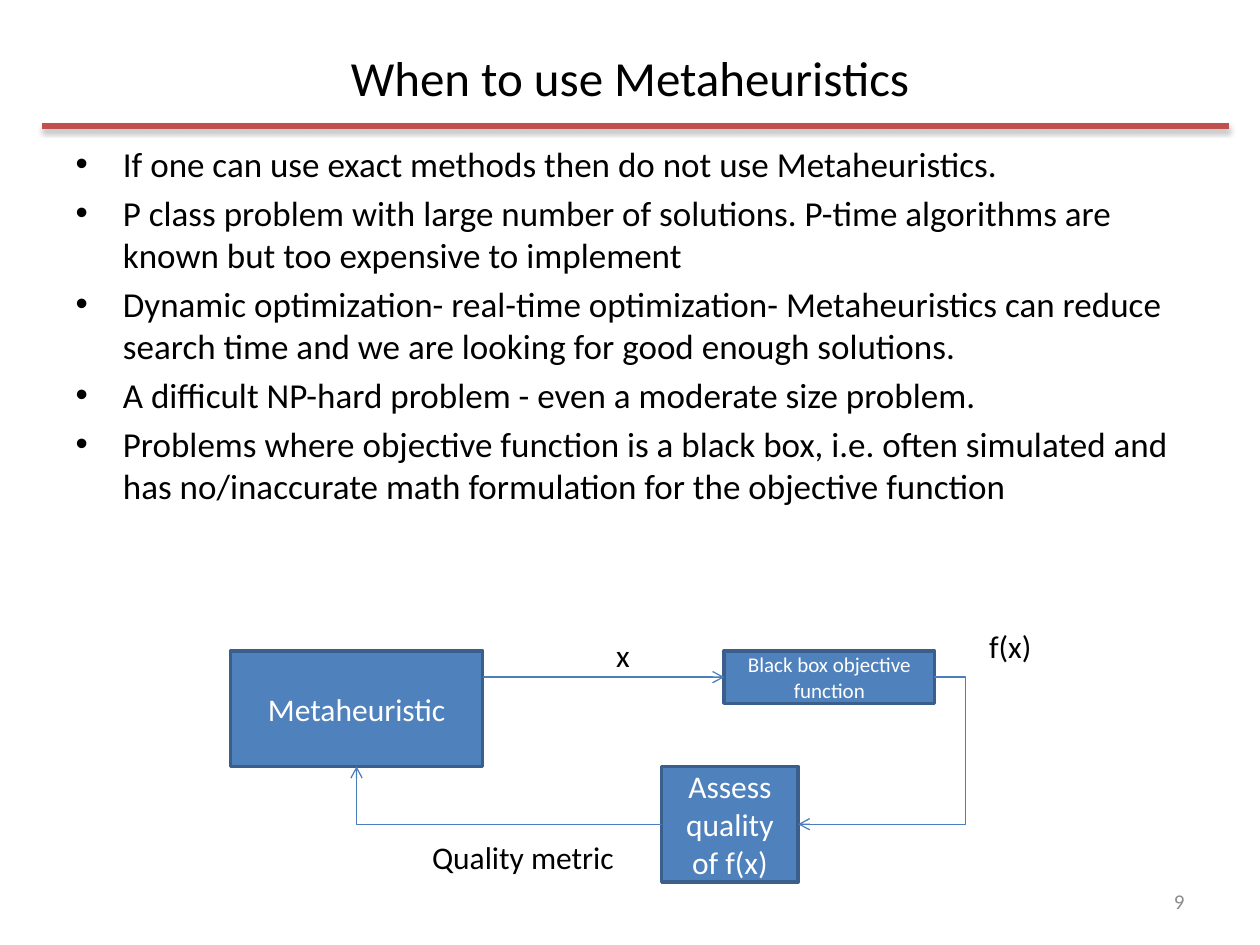
"""Build the slide on when to use metaheuristics, with its feedback loop diagram."""
from lxml.etree import SubElement
from pptx import Presentation
from pptx.dml.color import RGBColor
from pptx.enum.shapes import MSO_CONNECTOR, MSO_SHAPE
from pptx.enum.text import MSO_ANCHOR, MSO_AUTO_SIZE, PP_ALIGN
from pptx.oxml.ns import qn
from pptx.util import Cm, Pt

TITLE = "When to use Metaheuristics"
REASONS = [
    "If one can use exact methods then do not use Metaheuristics.",
    "P class problem with large number of solutions. P-time algorithms are known but too expensive to implement",
    "Dynamic optimization- real-time optimization- Metaheuristics can reduce search time and we are looking for good enough solutions.",
    "A difficult NP-hard problem - even a moderate size problem.",
    "Problems where objective function is a black box, i.e. often simulated and has no/inaccurate math formulation for the objective function",
]
STEPS = {
    "search": ("Metaheuristic", (4.65, 13.12, 5.08, 2.33), "label"),
    "objective": ("Black box objective function", (14.6, 13.12, 4.24, 1.06), "small"),
    "assess": ("Assess quality of f(x)", (13.34, 15.45, 2.75, 2.33), "label"),
}
LABELS = [
    ("x", (12.17, 12.7, 0.79, 1.02), False),
    ("f(x)", (19.69, 12.52, 1.47, 1.02), True),
    ("Quality metric", (8.46, 16.76, 4.22, 1.02), False),
]
PAGE_NUMBER = "9"
TOP, LEFT, BOTTOM, RIGHT = range(4)
THEME = {
    "font": "Calibri",
    "size": {"title": 28, "body": 20, "label": 18, "small": 12},
    "text": "000000", "inverse": "FFFFFF", "muted": "8C8C8C",
    "box": "4F81BD", "border": "3A5F8C", "arrow": "4B7EBC", "rule": "C0504D",
}


def rgb(role):
    return RGBColor.from_string(THEME[role])


def place(shape, box):
    shape.left, shape.top, shape.width, shape.height = map(Cm, box)


def format_text(shape, size, color="text", align=None):
    for paragraph in shape.text_frame.paragraphs:
        if align is not None:
            paragraph.alignment = align
        for run in paragraph.runs:
            run.font.name = THEME["font"]
            run.font.size = Pt(THEME["size"][size])
            run.font.color.rgb = rgb(color)


def add_step(slide, text, box, size):
    step = slide.shapes.add_shape(MSO_SHAPE.RECTANGLE, *map(Cm, box))
    step.shadow.inherit = False
    step.fill.solid()
    step.fill.fore_color.rgb = rgb("box")
    step.line.color.rgb = rgb("border")
    step.line.width = Pt(2)
    step.text_frame.text = text
    step.text_frame.vertical_anchor = MSO_ANCHOR.MIDDLE
    format_text(step, size, "inverse", PP_ALIGN.CENTER)
    return step


def add_label(slide, text, box, size="label", color="text", align=None, wrap=True):
    label = slide.shapes.add_textbox(*map(Cm, box))
    label.text_frame.word_wrap = wrap
    label.text_frame.text = text
    format_text(label, size, color, align)
    return label


def side_point(step, side):
    middle_x, middle_y = step.left + step.width // 2, step.top + step.height // 2
    return {
        TOP: (middle_x, step.top),
        LEFT: (step.left, middle_y),
        BOTTOM: (middle_x, step.top + step.height),
        RIGHT: (step.left + step.width, middle_y),
    }[side]


def add_line(slide, kind, start, end, color, width):
    line = slide.shapes.add_connector(kind, *start, *end)
    line.line.color.rgb = rgb(color)
    line.line.width = Pt(width)
    effects = SubElement(line._element.spPr, qn("a:effectLst"))
    return line, effects


def add_arrow(slide, kind, start, end):
    arrow, _ = add_line(slide, kind, start, end, "arrow", 0.75)
    SubElement(arrow.line._get_or_add_ln(), qn("a:tailEnd"), type="arrow")
    return arrow


def add_elbow(slide, source, source_side, target, target_side, preset, bend=None):
    elbow = add_arrow(slide, MSO_CONNECTOR.ELBOW,
                      side_point(source, source_side), side_point(target, target_side))
    elbow.begin_connect(source, source_side)
    elbow.end_connect(target, target_side)
    geometry = elbow._element.spPr.find(qn("a:prstGeom"))
    geometry.set("prst", preset)
    if bend is not None:
        guides = geometry.find(qn("a:avLst"))
        if guides is None:
            guides = SubElement(geometry, qn("a:avLst"))
        SubElement(guides, qn("a:gd"), name="adj1", fmla=f"val {round(bend * 100000)}")


def add_rule(slide):
    _, effects = add_line(slide, MSO_CONNECTOR.STRAIGHT, (Cm(0.85), Cm(2.54)),
                          (Cm(24.77), Cm(2.54)), "rule", 3)
    shadow = SubElement(effects, qn("a:outerShdw"), blurRad=str(Pt(3.1)),
                        dist=str(Pt(1.8)), dir="5400000", rotWithShape="0")
    tint = SubElement(shadow, qn("a:srgbClr"), val=THEME["text"])
    SubElement(tint, qn("a:alpha"), val="35000")


def add_diagram(slide):
    steps = {key: add_step(slide, *step) for key, step in STEPS.items()}
    search, objective, assess = steps["search"], steps["objective"], steps["assess"]
    entry = side_point(objective, LEFT)
    add_arrow(slide, MSO_CONNECTOR.STRAIGHT, (search.left + search.width, entry[1]), entry)
    add_elbow(slide, objective, RIGHT, assess, RIGHT, "bentConnector3", -0.23)
    add_elbow(slide, assess, LEFT, search, BOTTOM, "bentConnector2")
    for text, box, wrap in LABELS:
        add_label(slide, text, box, wrap=wrap)


def main():
    deck = Presentation()
    deck.slide_width, deck.slide_height = Cm(25.4), Cm(19.05)
    slide = deck.slides.add_slide(deck.slide_layouts[1])
    add_rule(slide)

    title, body = slide.placeholders
    place(title, (1.27, 0.76, 22.86, 1.57))
    title.text_frame.text = TITLE
    format_text(title, "title", align=PP_ALIGN.CENTER)

    place(body, (1.27, 2.74, 22.86, 14.81))
    body.text_frame.text = "\n".join(REASONS)
    format_text(body, "body")
    for placeholder in (title, body):
        placeholder.text_frame.auto_size = MSO_AUTO_SIZE.NONE

    add_diagram(slide)
    number = add_label(slide, PAGE_NUMBER, (18.2, 17.65, 5.93, 1.02),
                       "small", "muted", PP_ALIGN.RIGHT)
    number.text_frame.vertical_anchor = MSO_ANCHOR.MIDDLE
    deck.save("out.pptx")


if __name__ == "__main__":
    main()
